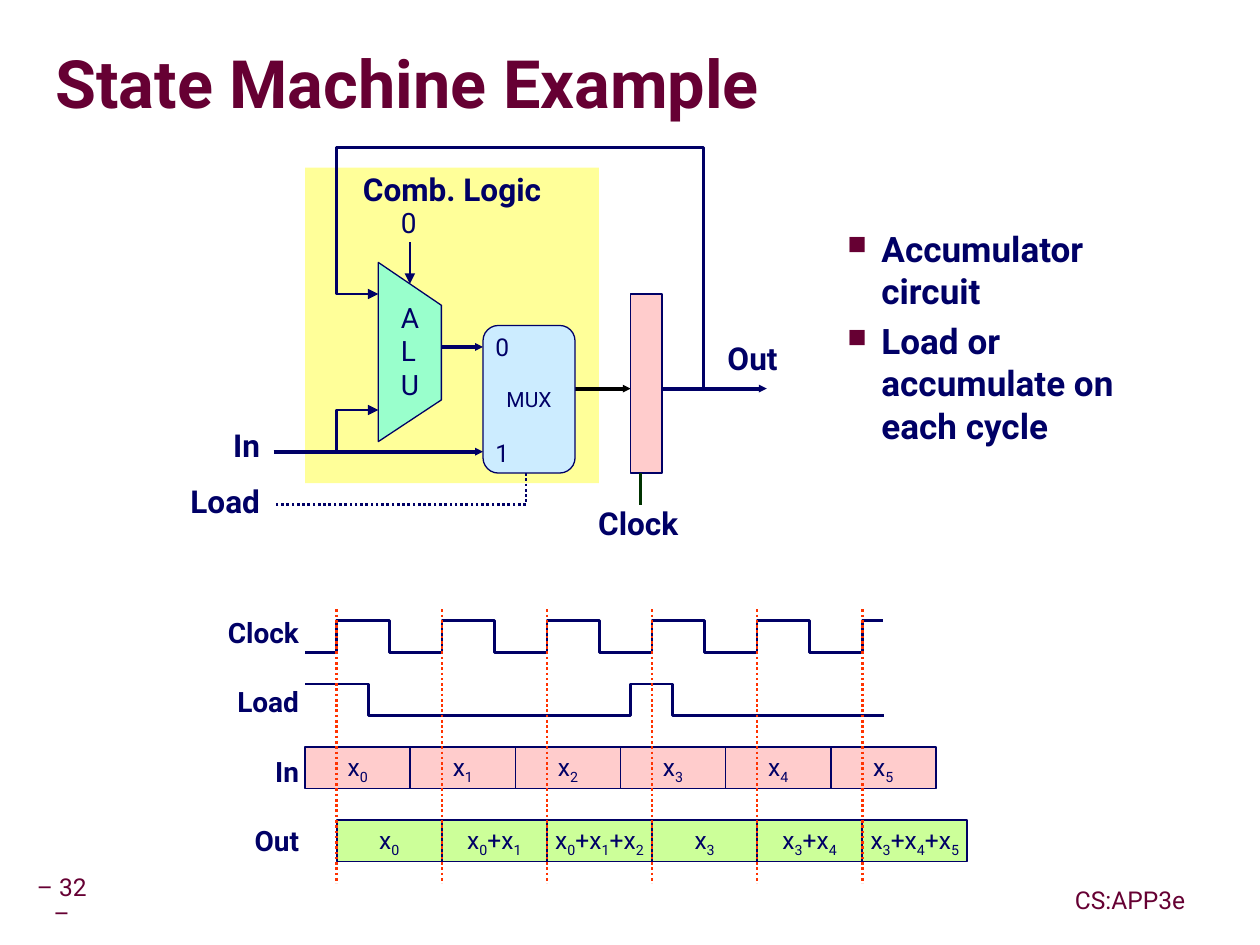
from itertools import groupby

from lxml import etree
from pptx import Presentation
from pptx import util as u
from pptx.dml.color import RGBColor
from pptx.enum import dml, shapes, text
from pptx.oxml.ns import qn

NAVY, MAROON, PINK, LIME = "000066", "660033", "FFCCCC", "CCFF99"
LEFT, CENTER, RIGHT = text.PP_ALIGN.LEFT, text.PP_ALIGN.CENTER, text.PP_ALIGN.RIGHT
TOP, MIDDLE = text.MSO_ANCHOR.TOP, text.MSO_ANCHOR.MIDDLE
RECTANGLE = shapes.MSO_SHAPE.RECTANGLE


def rgb(color):
    """Turn a hex string into a colour."""
    return RGBColor.from_string(color)


def style_line(shape, color, width, dotted=False, arrow=False):
    """Set the stroke of a shape or connector and drop its shadow."""
    shape.line.color.rgb = rgb(color)
    shape.line.width = u.Pt(width)
    if dotted:
        shape.line.dash_style = dml.MSO_LINE.ROUND_DOT
    properties = shape._element.spPr
    if arrow:
        size = "sm" if width > 2 else "med"
        etree.SubElement(properties.find(qn("a:ln")), qn("a:tailEnd"), type="triangle", w=size, len=size)
    if properties.find(qn("a:effectLst")) is None:
        etree.SubElement(properties, qn("a:effectLst"))


def write(shape, lines, size, color=NAVY, bold=False, align=LEFT, anchor=TOP,
          inset=(0.1, 0.05), spacing=None, wrap=False, subscripts=False):
    """Fill a shape with paragraphs, lowering the digits if subscripts is set."""
    frame = shape.text_frame
    frame.word_wrap = wrap
    frame.vertical_anchor = anchor
    frame.margin_left = frame.margin_right = u.Inches(inset[0])
    frame.margin_top = frame.margin_bottom = u.Inches(inset[1])
    for index, line in enumerate(lines):
        paragraph = frame.paragraphs[0] if index == 0 else frame.add_paragraph()
        paragraph.alignment = align
        paragraph.line_spacing = spacing
        pieces = groupby(line, key=lambda character: subscripts and character.isdigit())
        for lowered, characters in pieces:
            run = paragraph.add_run()
            run.text = "".join(characters)
            run.font.name = "Roboto"
            run.font.size = u.Pt(size)
            run.font.bold = bold
            run.font.color.rgb = rgb(color)
            if lowered:
                run.font._element.set("baseline", "-25000")
    return frame


class Region:
    """Places shapes relative to the top left corner of a box."""

    def __init__(self, canvas, left, top):
        """Remember the shape collection and the corner."""
        self.canvas, self.left, self.top = canvas, left, top

    def place(self, x, y):
        """Give the slide position of a point in the region."""
        return u.Inches(self.left + x), u.Inches(self.top + y)

    def label(self, x, y, width, height, lines, size, **options):
        """Add a text box."""
        box = self.canvas.add_textbox(*self.place(x, y), u.Inches(width), u.Inches(height))
        return write(box, lines, size, **options)

    def block(self, x, y, width, height, fill, line_width=0.75, kind=RECTANGLE):
        """Add a filled preset shape, outlined unless line_width is zero."""
        shape = self.canvas.add_shape(kind, *self.place(x, y), u.Inches(width), u.Inches(height))
        shape.shadow.inherit = False
        shape.fill.solid()
        shape.fill.fore_color.rgb = rgb(fill)
        if line_width:
            style_line(shape, NAVY, line_width)
        else:
            shape.line.fill.background()
        return shape

    def wire(self, points, color=NAVY, width=1.5, fill=None, **options):
        """Join points with a connector, an open line or a filled outline."""
        corners = [self.place(*point) for point in points]
        if len(corners) == 2:
            shape = self.canvas.add_connector(shapes.MSO_CONNECTOR.STRAIGHT, *corners[0], *corners[1])
        else:
            builder = self.canvas.build_freeform(*corners[0], scale=1.0)
            builder.add_line_segments(corners[1:], close=fill is not None)
            shape = builder.convert_to_shape()
            shape.shadow.inherit = False
            if fill:
                shape.fill.solid()
                shape.fill.fore_color.rgb = rgb(fill)
            else:
                shape.fill.background()
        style_line(shape, color, width, **options)


def add_title(slide, left, top):
    """Add the shadowed heading."""
    region = Region(slide.shapes, left, top)
    frame = region.label(0, 0, 9.52, 0.85, ["State Machine Example"], 38, color=MAROON, bold=True,
                         anchor=MIDDLE, inset=(0, 0), spacing=0.87, wrap=True)
    properties = frame.paragraphs[0].runs[0].font._element
    effects = etree.Element(qn("a:effectLst"))
    shadow = etree.SubElement(effects, qn("a:outerShdw"), dist="53882", dir="2700000")
    etree.SubElement(shadow, qn("a:srgbClr"), val="969696")
    properties.find(qn("a:solidFill")).addnext(effects)


def add_bullets(slide, left, top):
    """Add the square-bulleted remarks."""
    region = Region(slide.shapes, left, top)
    remarks = ["Accumulator circuit", "Load or accumulate on each cycle"]
    frame = region.label(0, 0, 3.31, 2.83, remarks, 20, bold=True, wrap=True)
    for paragraph in frame.paragraphs:
        paragraph.space_before = u.Pt(5)
        properties = paragraph._p.get_or_add_pPr()
        properties.set("marL", str(u.Inches(0.81)))
        properties.set("indent", str(u.Inches(-0.27)))
        color = etree.SubElement(properties, qn("a:buClr"))
        etree.SubElement(color, qn("a:srgbClr"), val=MAROON)
        etree.SubElement(properties, qn("a:buSzPct"), val="75000")
        etree.SubElement(properties, qn("a:buChar"), char="■")


def add_circuit(slide, left, top):
    """Draw the accumulator: ALU, multiplexer, register and wires."""
    region = Region(slide.shapes.add_group_shape().shapes, left, top)
    logic = region.block(1.09, 0.16, 2.33, 2.5, "FFFF99", line_width=0)
    write(logic, ["Comb. Logic"], 18, bold=True, align=CENTER, inset=(0.05, 0.05), spacing=0.9)
    region.wire([(3.92, 1.91), (4.75, 1.91)], width=2.25, arrow=True)
    region.wire([(1.92, 0.75), (1.92, 1.08)], width=0.75, arrow=True)
    region.wire([(1.67, 0.91), (2.17, 1.25), (2.17, 2), (1.67, 2.33)], width=0.75, fill="99FFCC")
    region.label(1.75, 1.16, 0.42, 0.9, list("ALU"), 16, wrap=True)
    region.wire([(0.84, 2.41), (2.5, 2.41)], width=2.25, arrow=True)
    region.wire([(2.17, 1.58), (2.5, 1.58)], width=2.25, arrow=True)
    region.label(1.75, 0.41, 0.32, 0.37, ["0"], 16)
    region.wire([(3.17, 1.91), (3.67, 1.91)], color="000000", width=2.25, arrow=True)
    region.label(4.34, 1.47, 0.63, 0.4, ["Out"], 18, bold=True)
    region.wire([(2.84, 2.58), (2.84, 2.83), (0.84, 2.83)], dotted=True)
    mux = region.block(2.5, 1.41, 0.73, 1.17, "CCECFF", kind=shapes.MSO_SHAPE.ROUNDED_RECTANGLE)
    write(mux, ["MUX"], 12, align=CENTER, anchor=MIDDLE)
    region.wire([(1.34, 2.41), (1.34, 2.08), (1.67, 2.08)], arrow=True)
    for digit, y in (("0", 1.41), ("1", 2.25)):
        region.label(2.5, y, 0.5, 0.33, [digit], 14, wrap=True)
    region.block(3.67, 1.16, 0.25, 1.42, PINK)
    region.wire([(3.75, 2.58), (3.75, 2.83)], color="003300")
    region.label(3.34, 2.81, 0.78, 0.37, ["Clock"], 18, bold=True, align=CENTER,
                 inset=(0.05, 0.05), spacing=0.9)
    region.wire([(3.92, 1.91), (4.25, 1.91), (4.25, 0), (1.34, 0), (1.34, 1.16), (1.67, 1.16)], arrow=True)
    for name, y in (("In", 2.16), ("Load", 2.6)):
        region.label(0, y, 0.83, 0.4, [name], 18, bold=True, align=RIGHT, wrap=True)


def add_timing(slide, left, top):
    """Draw the clock and load signals above the input and output values."""
    region = Region(slide.shapes.add_group_shape().shapes, left, top)
    period, start, first_edge = 5 / 6, 0.92, 1.17
    edges = [first_edge + cycle * period for cycle in range(6)]
    high, low = 0.09, 0.34
    clock = [(start, low)]
    for edge in edges[:-1]:
        fall = edge + period / 2
        clock += [(edge, low), (edge, high), (fall, high), (fall, low)]
    region.wire(clock + [(edges[-1], low), (edges[-1], high), (5.5, high)])
    high, low = 0.59, 0.84
    region.wire([(start, high), (1.42, high), (1.42, low), (3.5, low),
                 (3.5, high), (3.83, high), (3.83, low), (5.51, low)])
    inputs = [f"x{cycle}" for cycle in range(6)]
    outputs = ["x0", "x0+x1", "x0+x1+x2", "x3", "x3+x4", "x3+x4+x5"]
    for values, x, y, fill in ((inputs, start, 1.09, PINK), (outputs, first_edge, 1.67, LIME)):
        for cycle, value in enumerate(values):
            cell = region.block(x + cycle * period, y, period, 0.33, fill, line_width=1)
            write(cell, [value], 14, align=CENTER, anchor=MIDDLE, inset=(0.05, 0.05),
                  spacing=0.9, subscripts=True)
    for row, name in enumerate(["Clock", "Load", "In", "Out"]):
        region.label(0, 0.03 + row * 0.55, 0.92, 0.34, [name], 16, bold=True, align=RIGHT,
                     inset=(0.05, 0.05), spacing=0.9, wrap=True)
    for edge in edges:
        region.wire([(edge, 0), (edge, 2.17)], color="FF3300", dotted=True)


def add_footer(slide, left, top):
    """Add the page number and the course name."""
    region = Region(slide.shapes, left, top)
    for x, width, words, wrap in ((0, 0.5, "– 32 –", True), (8.2, 1.04, "CS:APP3e", False)):
        region.label(x, 0, width, 0.31, [words], 14, color=MAROON, align=CENTER, anchor=MIDDLE,
                     inset=(0.05, 0.05), spacing=0.9, wrap=wrap)


def main():
    """Build and save the slide."""
    presentation = Presentation()
    presentation.slide_width, presentation.slide_height = u.Inches(9.99), u.Inches(7.49)
    slide = presentation.slides.add_slide(presentation.slide_layouts[6])
    add_footer(slide, 0.24, 6.99)
    add_title(slide, 0.44, 0.27)
    add_bullets(slide, 6.08, 1.75)
    add_circuit(slide, 1.33, 1.17)
    add_timing(slide, 1.5, 4.83)
    presentation.save("out.pptx")


if __name__ == "__main__":
    main()
